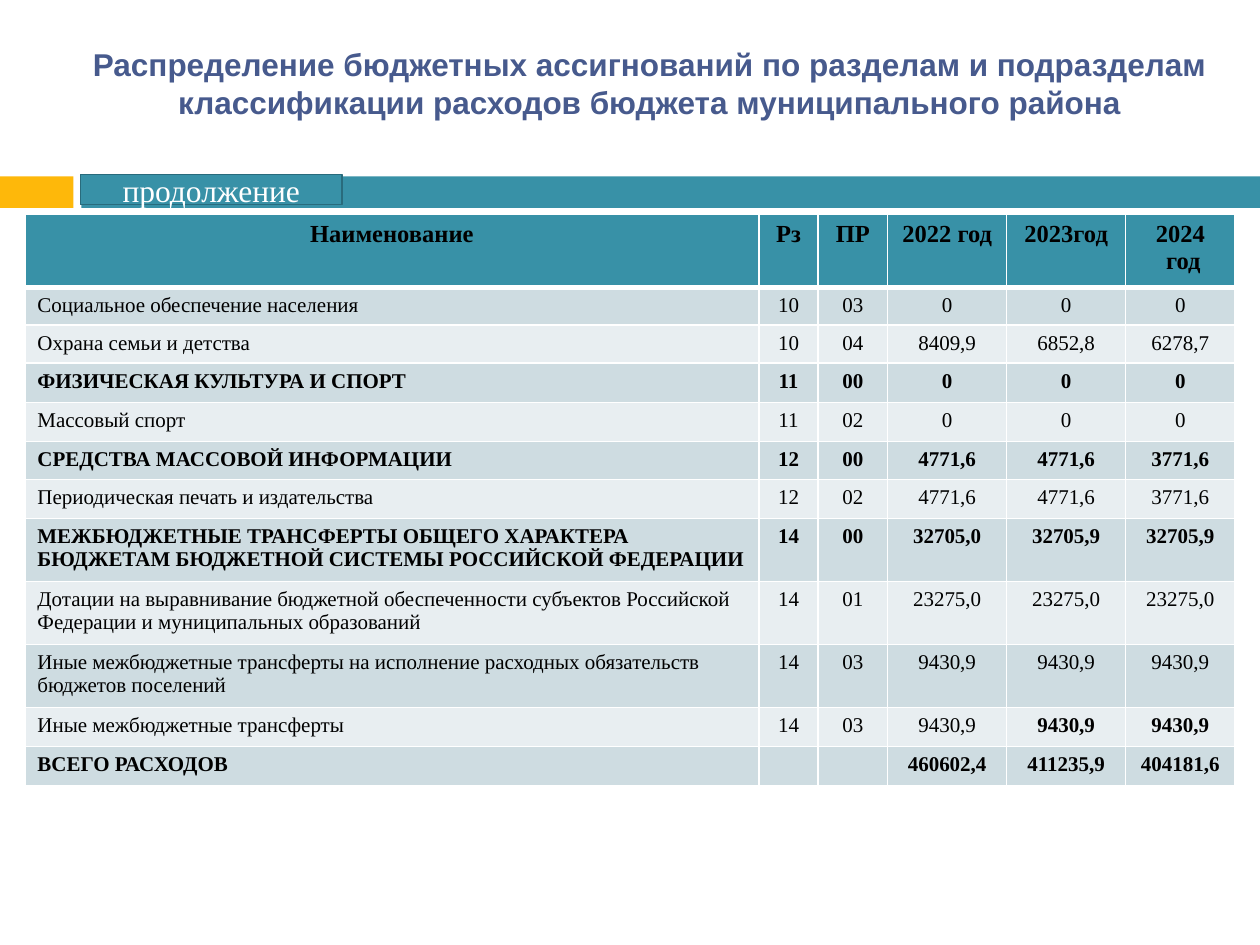
import pptx
import pptx.util
import pptx.dml.color
import pptx.enum.shapes
import pptx.enum.text
import pptx.oxml.ns
import lxml.etree

Pt = pptx.util.Pt
qn = pptx.oxml.ns.qn

COLORS = {
    "teal": "3891A7",
    "teal_edge": "296B7C",
    "amber": "FEB80A",
    "title": "475A8D",
    "odd_row": "CEDCE1",
    "even_row": "E8EEF1",
    "white": "FFFFFF",
    "black": "000000",
}

COLUMN_WIDTHS = [419.5, 33.8, 39.8, 68, 68, 62.5]
ROW_HEIGHTS = [41.8, 20.6, 20.6, 22.6, 22.3, 20.6, 22.3, 33.8, 33.8, 33.8, 22.3, 22.3]

HEADER = ["Наименование", "Рз", "ПР", "2022 год", "2023год", "2024\n год"]
EXPENSES = [
    ["Социальное обеспечение населения", "10", "03", "0", "0", "0"],
    ["Охрана семьи и детства", "10", "04", "8409,9", "6852,8", "6278,7"],
    ["ФИЗИЧЕСКАЯ КУЛЬТУРА И СПОРТ", "11", "00", "0", "0", "0"],
    ["Массовый спорт", "11", "02", "0", "0", "0"],
    ["СРЕДСТВА МАССОВОЙ ИНФОРМАЦИИ", "12", "00", "4771,6", "4771,6", "3771,6"],
    ["Периодическая печать и издательства", "12", "02", "4771,6", "4771,6", "3771,6"],
    ["МЕЖБЮДЖЕТНЫЕ ТРАНСФЕРТЫ ОБЩЕГО ХАРАКТЕРА БЮДЖЕТАМ БЮДЖЕТНОЙ СИСТЕМЫ РОССИЙСКОЙ ФЕДЕРАЦИИ",
     "14", "00", "32705,0", "32705,9", "32705,9"],
    ["Дотации на выравнивание бюджетной обеспеченности субъектов Российской Федерации "
     "и муниципальных образований", "14", "01", "23275,0", "23275,0", "23275,0"],
    ["Иные межбюджетные трансферты на исполнение расходных обязательств бюджетов поселений",
     "14", "03", "9430,9", "9430,9", "9430,9"],
    ["Иные межбюджетные трансферты", "14", "03", "9430,9", "9430,9", "9430,9"],
    ["ВСЕГО РАСХОДОВ", "", "", "460602,4", "411235,9", "404181,6"],
]
BOLD_CELLS = {(10, 4), (10, 5)}


def rgb(name):
    return pptx.dml.color.RGBColor.from_string(COLORS[name])


def write_text(frame, text, size=12, font="Times New Roman", color="black", bold=False, align="CENTER"):
    for index, line in enumerate(text.split("\n")):
        para = frame.paragraphs[0] if index == 0 else frame.add_paragraph()
        para.alignment = getattr(pptx.enum.text.PP_ALIGN, align)
        if not line:
            lxml.etree.SubElement(para._p, qn("a:endParaRPr"), sz=str(size * 100))
            continue
        span = para.add_run()
        span.text = line
        span.font.size = Pt(size)
        span.font.name = font
        span.font.bold = bold
        span.font.color.rgb = rgb(color)


def set_borders(cell, **widths):
    properties = cell._tc.get_or_add_tcPr()
    for index, side in enumerate("LRTB"):
        line = lxml.etree.Element(qn("a:ln" + side), w=str(Pt(widths.get(side, 1))))
        fill = lxml.etree.SubElement(line, qn("a:solidFill"))
        lxml.etree.SubElement(fill, qn("a:srgbClr"), val=COLORS["white"])
        properties.insert(index, line)


class BudgetSlide:
    def __init__(self, deck):
        self.page = deck.slides.add_slide(deck.slide_layouts[6])

    def bar(self, left, top, width, height, fill, edge=None):
        box = self.page.shapes.add_shape(
            pptx.enum.shapes.MSO_SHAPE.RECTANGLE, Pt(left), Pt(top), Pt(width), Pt(height))
        box.shadow.inherit = False
        box.fill.solid()
        box.fill.fore_color.rgb = rgb(fill)
        if edge:
            box.line.color.rgb = rgb(edge)
            box.line.width = Pt(0)
        else:
            box.line.fill.background()
        return box

    def label(self, left, top, width, height, text, **style):
        box = self.page.shapes.add_textbox(Pt(left), Pt(top), Pt(width), Pt(height))
        box.text_frame.word_wrap = True
        box.text_frame.vertical_anchor = pptx.enum.text.MSO_ANCHOR.MIDDLE
        write_text(box.text_frame, text, **style)

    def table(self, left, top, rows):
        table = self.page.shapes.add_table(
            len(rows), len(COLUMN_WIDTHS), Pt(left), Pt(top),
            Pt(sum(COLUMN_WIDTHS)), Pt(sum(ROW_HEIGHTS))).table
        for column, width in zip(table.columns, COLUMN_WIDTHS):
            column.width = Pt(width)
        for row, height in zip(table.rows, ROW_HEIGHTS):
            row.height = Pt(height)
        for r, values in enumerate(rows):
            row_fill = "teal" if r == 0 else ("odd_row" if r % 2 else "even_row")
            for c, value in enumerate(values):
                cell = table.cell(r, c)
                cell.fill.solid()
                cell.fill.fore_color.rgb = rgb(row_fill)
                set_borders(cell, T=3 if r == 1 else 1, B=3 if r == 0 else 1)
                write_text(
                    cell.text_frame, value,
                    size=14 if r == 0 else 12,
                    bold=values[0].isupper() or r == 0 or (r, c) in BOLD_CELLS,
                    align="LEFT" if r and c == 0 else "CENTER")


def main():
    deck = pptx.Presentation()
    deck.slide_width, deck.slide_height = Pt(720), Pt(540)
    slide = BudgetSlide(deck)
    slide.bar(0, 100.8, 42, 18, "amber")
    slide.bar(46.5, 100.8, 673.5, 18, "teal")
    slide.label(
        31, 18, 680.4, 59,
        "Распределение бюджетных ассигнований по разделам и подразделам "
        "классификации расходов бюджета муниципального района",
        size=18, font="Arial", color="title", bold=True)
    slide.table(14.2, 122.4, [HEADER] + EXPENSES)
    tab = slide.bar(46, 99.8, 149.5, 17.3, "teal", edge="teal_edge")
    tab.text_frame.vertical_anchor = pptx.enum.text.MSO_ANCHOR.MIDDLE
    write_text(tab.text_frame, "продолжение", size=18, color="white")
    deck.save("out.pptx")


if __name__ == "__main__":
    main()
